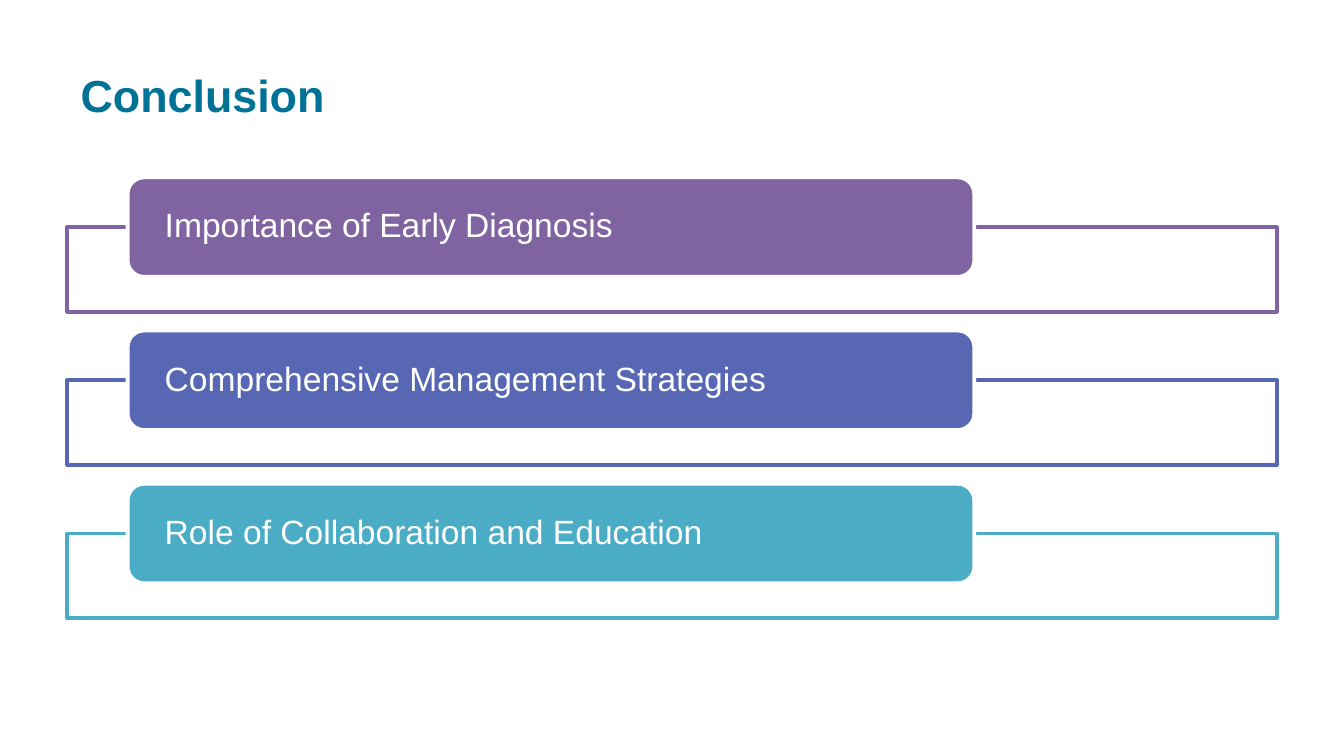
import pptx
import pptx.dml.color
import pptx.enum.shapes
import pptx.enum.text
import pptx.oxml
import pptx.oxml.ns
import pptx.util

WIDTH = 10
HEIGHT = WIDTH * 9 / 16
MARGIN = 0.5
ROW_PITCH = 1.14
FONT = "Arial"
CONCLUSIONS = [
    ("Importance of Early Diagnosis", "8064A2"),
    ("Comprehensive Management Strategies", "5767B4"),
    ("Role of Collaboration and Education", "4BACC6"),
]


def colour(hex_text):
    """Return the RGB colour for a hex string."""
    return pptx.dml.color.RGBColor.from_string(hex_text)


def inches(*lengths):
    """Convert lengths in inches to a list of slide units."""
    return [pptx.util.Inches(length) for length in lengths]


def style_text(para, size, hex_text, bold=False):
    """Set the font and left alignment of a paragraph."""
    para.alignment = pptx.enum.text.PP_ALIGN.LEFT
    para.font.name = FONT
    para.font.size = pptx.util.Pt(size)
    para.font.bold = bold
    para.font.color.rgb = colour(hex_text)


def add_box(page, kind, box, fill, line):
    """Add a filled, outlined shape without shadow."""
    shape = page.shapes.add_shape(kind, *inches(*box))
    shape.shadow.inherit = False
    shape.fill.solid()
    shape.fill.fore_color.rgb = colour(fill)
    shape.line.color.rgb = colour(line)
    shape.line.width = pptx.util.Pt(2)
    return shape


def set_opacity(shape, percent):
    """Make the solid fill of a shape partly transparent."""
    tone = shape.fill._xPr.find(".//" + pptx.oxml.ns.qn("a:srgbClr"))
    namespace = pptx.oxml.ns.nsdecls("a")
    tone.append(pptx.oxml.parse_xml(f'<a:alpha {namespace} val="{percent * 1000}"/>'))


def add_title(page, box, text):
    """Place and format the title placeholder."""
    title = page.shapes.title
    title.left, title.top, title.width, title.height = inches(*box)
    title.text_frame.text = text
    title.text_frame.vertical_anchor = pptx.enum.text.MSO_ANCHOR.MIDDLE
    style_text(title.text_frame.paragraphs[0], 24, "007296", bold=True)


def add_conclusion(page, box, text, accent):
    """Draw an outlined panel with a labelled bar over its upper edge."""
    left, top, width, height = box
    shapes = pptx.enum.shapes.MSO_SHAPE
    bar_height = 0.74
    panel_top = top + bar_height / 2
    panel_box = (left, panel_top, width, top + height - panel_top)
    panel = add_box(page, shapes.RECTANGLE, panel_box, "FFFFFF", accent)
    set_opacity(panel, 90)
    bar_box = (left + width * 0.05, top, width * 0.7, bar_height)
    bar = add_box(page, shapes.ROUNDED_RECTANGLE, bar_box, accent, "FFFFFF")
    frame = bar.text_frame
    frame.word_wrap = True
    frame.vertical_anchor = pptx.enum.text.MSO_ANCHOR.MIDDLE
    frame.margin_left, frame.margin_right = inches(0.24, 0.24)
    frame.margin_top = frame.margin_bottom = 0
    frame.text = text
    para = frame.paragraphs[0]
    para.line_spacing = 0.9
    style_text(para, 18, "FFFFFF")


def main():
    """Build the conclusion slide and save it."""
    deck = pptx.Presentation()
    deck.slide_width, deck.slide_height = inches(WIDTH, HEIGHT)
    page = deck.slides.add_slide(deck.slide_layouts[5])
    content_width = WIDTH - 2 * MARGIN
    add_title(page, (MARGIN, 0.23, content_width, 0.94), "Conclusion")
    for row, (text, accent) in enumerate(CONCLUSIONS):
        box = (MARGIN, 1.32 + row * ROW_PITCH, content_width, 1)
        add_conclusion(page, box, text, accent)
    deck.save("out.pptx")


if __name__ == "__main__":
    main()
